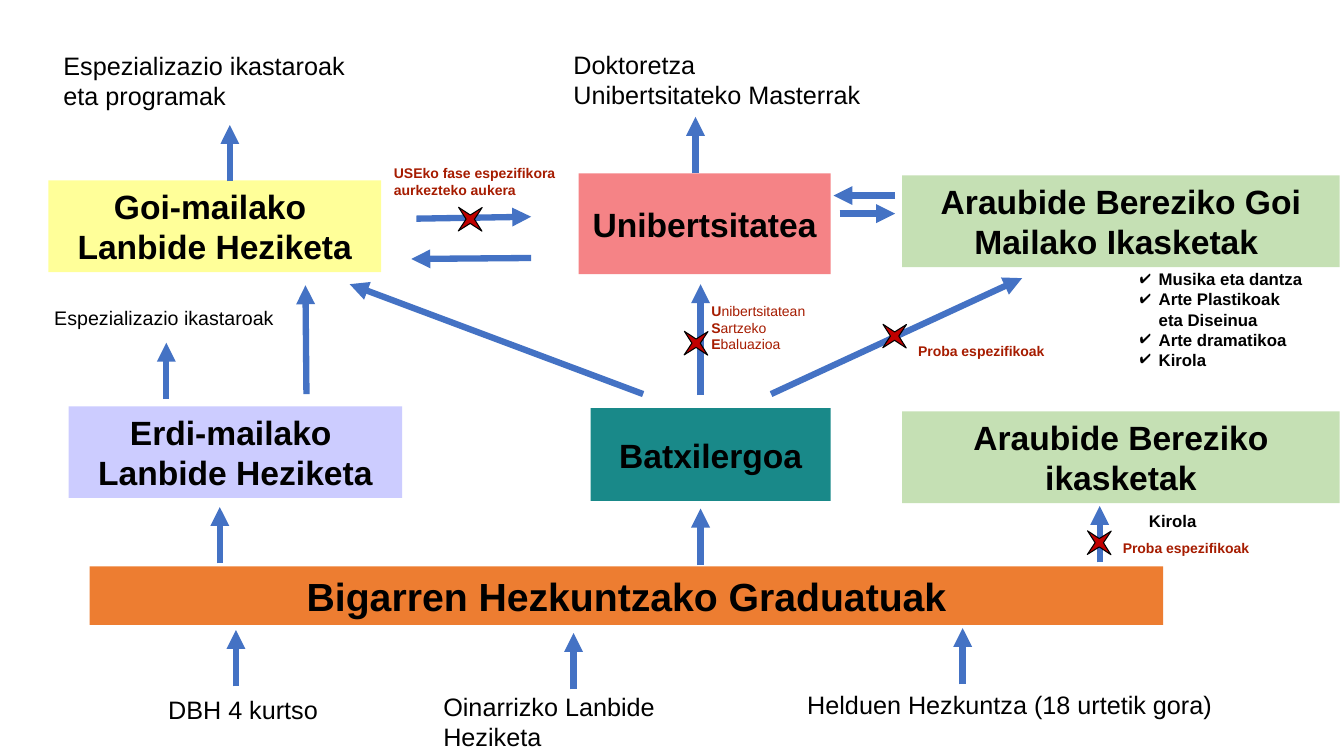
"""Builds a slide showing the pathways through the Basque education system."""
from dataclasses import dataclass

from lxml import etree
from pptx import Presentation
from pptx import util as u
from pptx.dml.color import RGBColor
from pptx.enum import shapes, text
from pptx.oxml import ns


@dataclass(frozen=True)
class Theme:
    font: str = "Arial"
    black: str = "000000"
    note: str = "A61C00"
    arrow: str = "4472C4"
    star: str = "C00000"
    pink: str = "F58386"
    yellow: str = "FFFF99"
    orange: str = "ED7D31"
    lilac: str = "CCCCFF"
    teal: str = "198989"
    green: str = "C5E0B4"
    banner: int = 28
    stage: int = 24
    label: int = 18
    branch: int = 14
    detail: int = 12
    small: int = 10


theme = Theme()


def write(box, lines, size, color=theme.black, bold=False, align=text.PP_ALIGN.LEFT,
          anchor=text.MSO_ANCHOR.TOP, initials=False, bullet=None):
    """Fill a shape with one paragraph per line, optionally with bold initials or bullets."""
    frame = box.text_frame
    frame.word_wrap = True
    frame.vertical_anchor = anchor
    for number, line in enumerate(lines):
        para = frame.add_paragraph() if number else frame.paragraphs[0]
        para.alignment = align
        parts = [(line[0], True), (line[1:], False)] if initials else [(line, bold)]
        for words, heavy in parts:
            span = para.add_run()
            span.text = words
            span.font.name = theme.font
            span.font.size = u.Pt(size)
            span.font.bold = heavy
            span.font.color.rgb = RGBColor.from_string(color)
        if bullet:
            props = para._p.get_or_add_pPr()
            props.set("marL", str(u.Pt(13.5)))
            props.set("indent", str(-u.Pt(13.5)))
            etree.SubElement(props, ns.qn("a:buChar")).set("char", bullet)


deck = Presentation()
deck.slide_width, deck.slide_height = u.Pt(960), u.Pt(540)
page = deck.slides.add_slide(deck.slide_layouts[6])

stages = [
    (413.3, 123.8, 180, 72, theme.pink, theme.stage, ["Unibertsitatea"]),
    (34.6, 128.9, 237.6, 65.5, theme.yellow, theme.stage, ["Goi-mailako ", "Lanbide Heziketa"]),
    (64.1, 404.6, 766.8, 41.8, theme.orange, theme.banner, ["Bigarren Hezkuntzako Graduatuak"]),
    (49, 290.2, 238.3, 65.5, theme.lilac, theme.stage, ["Erdi-mailako ", "Lanbide Heziketa"]),
    (421.9, 291.6, 171.4, 66.2, theme.teal, theme.stage, ["Batxilergoa"]),
    (644.4, 293.8, 312.5, 65.5, theme.green, theme.stage, ["Araubide Bereziko ikasketak"]),
    (644.4, 125.3, 312.5, 65.5, theme.green, theme.stage,
     ["Araubide Bereziko Goi Mailako Ikasketak "]),
]
for left, top, width, height, fill, size, lines in stages:
    box = page.shapes.add_shape(shapes.MSO_SHAPE.RECTANGLE,
                                u.Pt(left), u.Pt(top), u.Pt(width), u.Pt(height))
    box.shadow.inherit = False
    box.fill.solid()
    box.fill.fore_color.rgb = RGBColor.from_string(fill)
    box.line.fill.background()
    write(box, lines, size, bold=True, align=text.PP_ALIGN.CENTER,
          anchor=text.MSO_ANCHOR.MIDDLE)

rise = 40.3
steps_up = [(157, 402.5), (500.4, 403.6), (785.5, 401.8), (496.8, 123.8), (164.2, 129.6),
            (687.6, 488.9), (409.7, 492.5), (168.5, 490.3), (118.8, 285.1)]
arrows = [(x, bottom, x, bottom - rise) for x, bottom in steps_up] + [
    (459.4, 281.5, 249.8, 203),
    (218.9, 281.5, 218.2, 203.8),
    (550.8, 281.5, 730.1, 198.7),
    (379.4, 184.3, 293.8, 185),
    (297.4, 156.2, 379.4, 154.8),
    (500.4, 282.2, 500.4, 203),
    (639.4, 139.7, 595.4, 139.7),
    (599.8, 152.6, 639.4, 152.6),
]
for points in arrows:
    arrow = page.shapes.add_connector(shapes.MSO_CONNECTOR.STRAIGHT, *map(u.Pt, points))
    arrow.line.color.rgb = RGBColor.from_string(theme.arrow)
    arrow.line.width = u.Pt(4.5)
    etree.SubElement(arrow.line._get_or_add_ln(), ns.qn("a:tailEnd")).set("type", "triangle")
    etree.SubElement(arrow._element.spPr, ns.qn("a:effectLst"))

star_size = 23.8
for center_x, center_y in [(497.2, 245.2), (639, 240.1), (785.2, 387.7), (335.9, 156.6)]:
    star = page.shapes.add_shape(shapes.MSO_SHAPE.STAR_4_POINT,
                                 u.Pt(center_x - star_size / 2), u.Pt(center_y - star_size / 2),
                                 u.Pt(star_size), u.Pt(star_size))
    star.adjustments[0] = 0.125
    star.rotation = 45.5
    star.shadow.inherit = False
    star.fill.solid()
    star.fill.fore_color.rgb = RGBColor.from_string(theme.star)
    star.line.color.rgb = RGBColor.from_string(theme.black)
    star.line.width = u.Pt(0.75)

label = dict(size=theme.label)
detail = dict(size=theme.detail, bold=True)
note = dict(size=theme.small, color=theme.note, bold=True)
captions = [
    (38.2, 32.4, 227.5, 51, ["Espezializazio ikastaroak eta programak"], label),
    (402.5, 31.7, 222.5, 51, ["Doktoretza", "Unibertsitateko Masterrak"], label),
    (113, 492.5, 128.2, 29, ["DBH 4 kurtso"], label),
    (309.6, 490.3, 230.4, 51, ["Oinarrizko Lanbide Heziketa"], label),
    (569.5, 488.9, 315.4, 29, ["Helduen Hezkuntza (18 urtetik gora)"], label),
    (31.7, 215.3, 172.8, 24.5, ["Espezializazio ikastaroak"], dict(size=theme.branch)),
    (807.1, 188.6, 131.8, 80,
     ["Musika eta dantza", "Arte Plastikoak eta Diseinua", "Arte dramatikoa", "Kirola"],
     dict(detail, bullet="✔")),
    (813.6, 361.4, 70, 22, ["Kirola"], detail),
    (501.1, 212.4, 89.3, 44, ["Unibertsitatean", "Sartzeko", "Ebaluazioa"],
     dict(note, initials=True)),
    (648.7, 241.2, 157, 26.6, ["Proba espezifikoak"], note),
    (794.9, 381.6, 157, 26.6, ["Proba espezifikoak"], note),
    (274.3, 113.8, 154.8, 31.7, ["USEko fase espezifikora aurkezteko aukera"], note),
]
for left, top, width, height, lines, style in captions:
    box = page.shapes.add_textbox(u.Pt(left), u.Pt(top), u.Pt(width), u.Pt(height))
    write(box, lines, **style)

deck.save("out.pptx")
